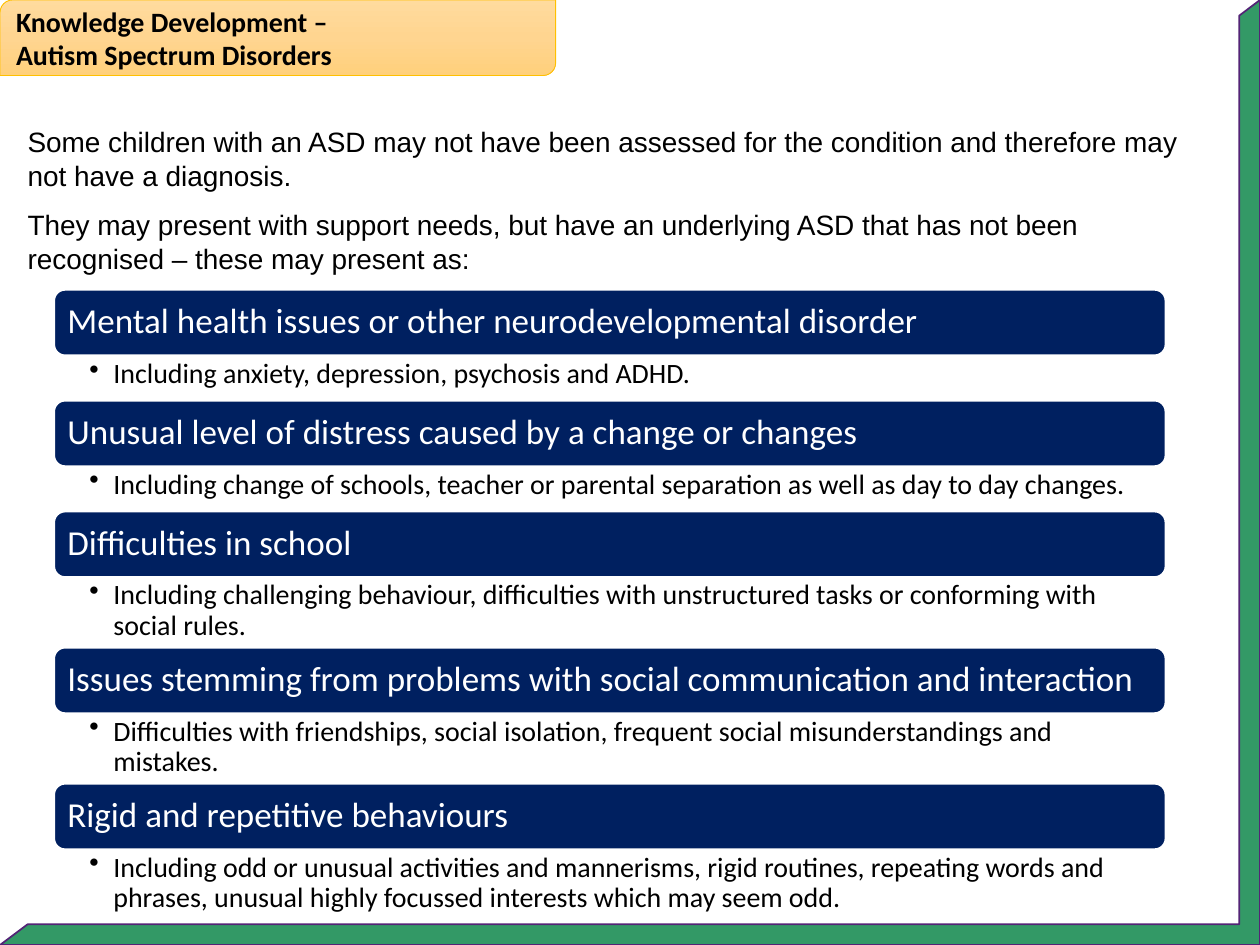
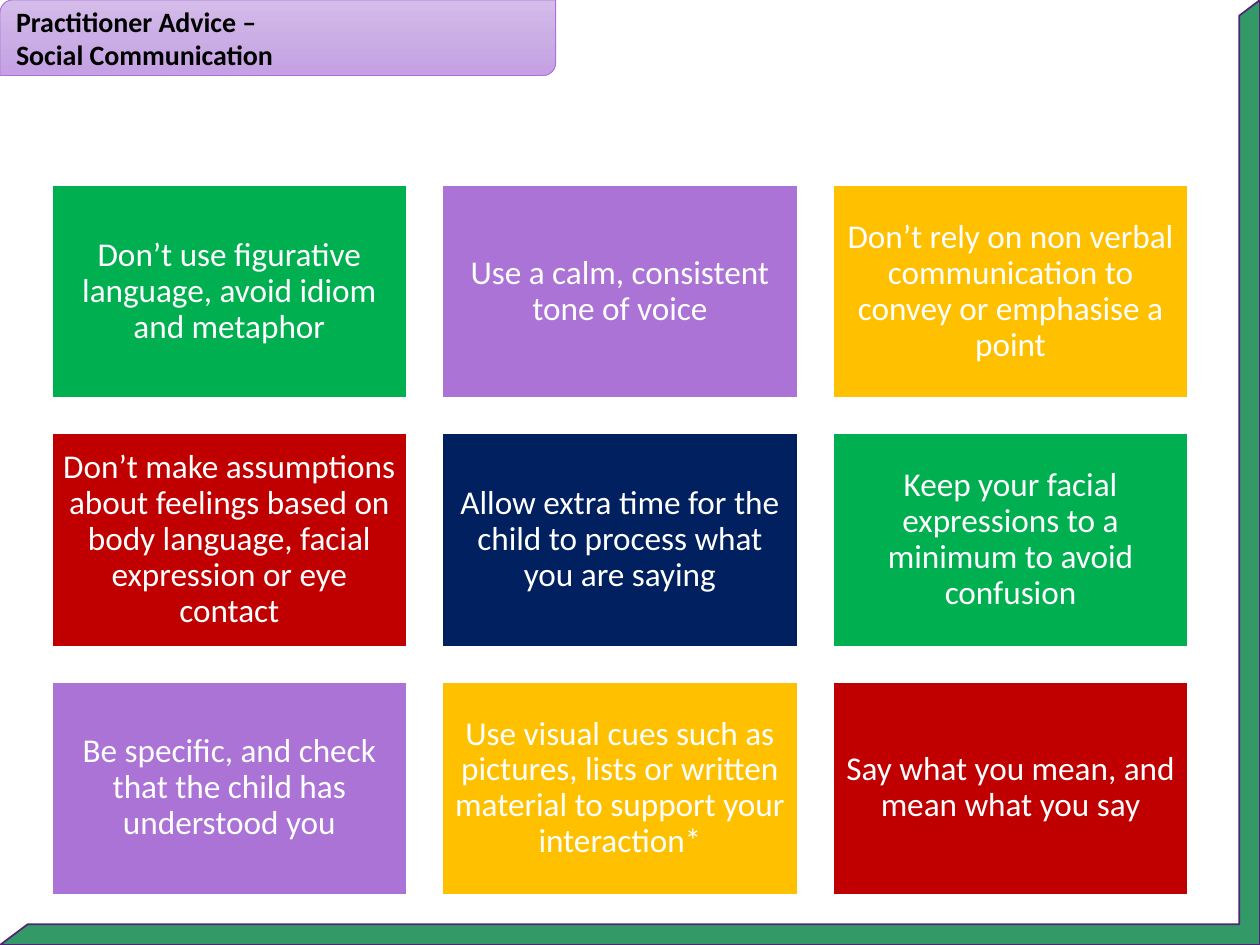
from copy import deepcopy
from itertools import cycle

from lxml import etree
from pptx import Presentation
from pptx.dml.color import RGBColor
from pptx.enum.shapes import MSO_SHAPE
from pptx.enum.text import MSO_ANCHOR, PP_ALIGN
from pptx.oxml.ns import qn
from pptx.util import Inches, Pt

HALF_FRAME = MSO_SHAPE.HALF_FRAME
TAB = MSO_SHAPE.ROUND_2_DIAG_RECTANGLE
ROUNDED = MSO_SHAPE.ROUNDED_RECTANGLE
RECTANGLE = MSO_SHAPE.RECTANGLE
TOP, MIDDLE = MSO_ANCHOR.TOP, MSO_ANCHOR.MIDDLE
LEFT, CENTER = PP_ALIGN.LEFT, PP_ALIGN.CENTER

rgb = RGBColor.from_string
WHITE, BLACK, NAVY = "FFFFFF", "000000", "002060"
GREEN, PURPLE, AMBER, RED = "00B050", "AB73D5", "FFC000", "C00000"
FRAME_FILL, FRAME_LINE = "339966", "532476"


def draw(slide, preset, area, fill, line, weight=1):
    shape = slide.shapes.add_shape(preset, *map(Inches, area))
    shape.shadow.inherit = False
    shape.fill.solid()
    shape.fill.fore_color.rgb = rgb(fill)
    shape.line.color.rgb = rgb(line)
    shape.line.width = Pt(weight)
    return shape


def write(shape, text, size, color=BLACK, font="Calibri", bold=False, align=LEFT,
          anchor=MIDDLE, spacing=1.0, insets=(0.1, 0.05, 0.1, 0.05)):
    frame = shape.text_frame
    frame.word_wrap = True
    frame.vertical_anchor = anchor
    frame.margin_left, frame.margin_top, frame.margin_right, frame.margin_bottom = map(Inches, insets)
    frame.text = text
    for paragraph in frame.paragraphs:
        paragraph.alignment = align
        paragraph.line_spacing = spacing
        for run in paragraph.runs:
            run.font.name = font
            run.font.size = Pt(size)
            run.font.bold = bold
            run.font.color.rgb = rgb(color)
    return frame.paragraphs


prs = Presentation()
prs.slide_width, prs.slide_height = Inches(10), Inches(7.5)
blank = prs.slide_layouts[6]

sections = [
    ("Knowledge Development –\nAutism Spectrum Disorders", AMBER, ["FFDB9E", "FFD590", "FFD07C"]),
    ("Practitioner Advice –\nSocial Communication", PURPLE, ["D4BCEA", "CBAEE5", "C5A0E4"]),
]
for title, outline, shades in sections:
    slide = prs.slides.add_slide(blank)
    border = draw(slide, HALF_FRAME, (0, 0, 10, 7.5), FRAME_FILL, FRAME_LINE)
    border.rotation = 180
    border.adjustments[0] = border.adjustments[1] = 0.022

    heading = draw(slide, TAB, (0, 0, 4.41, 0.6), shades[0], outline, 0.5)
    heading.fill.gradient()
    heading.fill.gradient_angle = 270
    first_stop = heading.fill.gradient_stops[0]
    stop_list = heading._element.spPr.find(".//" + qn("a:gsLst"))
    stop_list.insert(1, deepcopy(stop_list[0]))
    for index, (stop, shade) in enumerate(zip(heading.fill.gradient_stops, shades)):
        stop.color.rgb = rgb(shade)
        stop.position = index / 2
    write(heading, title, 16, bold=True)

knowledge, advice = prs.slides

intro = knowledge.shapes.add_textbox(*map(Inches, (0.12, 0.94, 9.61, 1.31)))
intro_lines = write(
    intro,
    "Some children with an ASD may not have been assessed for the condition and therefore may "
    "not have a diagnosis.\n"
    "They may present with support needs, but have an underlying ASD that has not been "
    "recognised – these may present as:",
    16, font="Arial", anchor=TOP)
intro_lines[1].space_before = Pt(9)

ONE_LINE, TWO_LINES = 0.36, 0.56
presentations = [
    ("Mental health issues or other neurodevelopmental disorder", ONE_LINE,
     "Including anxiety, depression, psychosis and ADHD."),
    ("Unusual level of distress caused by a change or changes", ONE_LINE,
     "Including change of schools, teacher or parental separation as well as day to day changes."),
    ("Difficulties in school", TWO_LINES,
     "Including challenging behaviour, difficulties with unstructured tasks or conforming with social rules."),
    ("Issues stemming from problems with social communication and interaction", TWO_LINES,
     "Difficulties with friendships, social isolation, frequent social misunderstandings and mistakes."),
    ("Rigid and repetitive behaviours", TWO_LINES,
     "Including odd or unusual activities and mannerisms, rigid routines, repeating words and phrases, "
     "unusual highly focussed interests which may seem odd."),
]
list_left, list_width, bar_height, top = 0.43, 8.82, 0.52, 2.3
for sign, detail_height, detail in presentations:
    bar = draw(knowledge, ROUNDED, (list_left, top, list_width, bar_height), NAVY, WHITE)
    write(bar, sign, 20, WHITE, spacing=0.9, insets=[0.08] * 4)
    top += bar_height
    example = knowledge.shapes.add_textbox(*map(Inches, (list_left, top, list_width, detail_height)))
    bullet = write(example, detail, 16, anchor=TOP, spacing=0.9, insets=(0.28, 0.03, 0.16, 0.03))[0]
    bullet.level = 1
    properties = bullet._p.get_or_add_pPr()
    properties.set("marL", str(Inches(0.19)))
    properties.set("indent", str(Inches(-0.19)))
    etree.SubElement(properties, qn("a:buChar")).set("char", "•")
    top += detail_height

tips = [
    "Don’t use figurative language, avoid idiom and metaphor",
    "Use a calm, consistent tone of voice",
    "Don’t rely on non verbal communication to convey or emphasise a point",
    "Don’t make assumptions about feelings based on body language, facial expression or eye contact",
    "Allow extra time for the child to process what you are saying",
    "Keep your facial expressions to a minimum to avoid confusion",
    "Be specific, and check that the child has understood you",
    "Use visual cues such as pictures, lists or written material to support your interaction*",
    "Say what you mean, and mean what you say",
]
tile_width, tile_height, gap = 2.82, 1.69, 0.28
for index, (tip, color) in enumerate(zip(tips, cycle([GREEN, PURPLE, AMBER, RED, NAVY]))):
    row, column = divmod(index, 3)
    area = (0.41 + column * (tile_width + gap), 1.47 + row * (tile_height + gap), tile_width, tile_height)
    tile = draw(advice, RECTANGLE, area, color, WHITE)
    write(tile, tip, 19, WHITE, align=CENTER, spacing=0.9, insets=[0.08] * 4)

prs.save("out.pptx")
